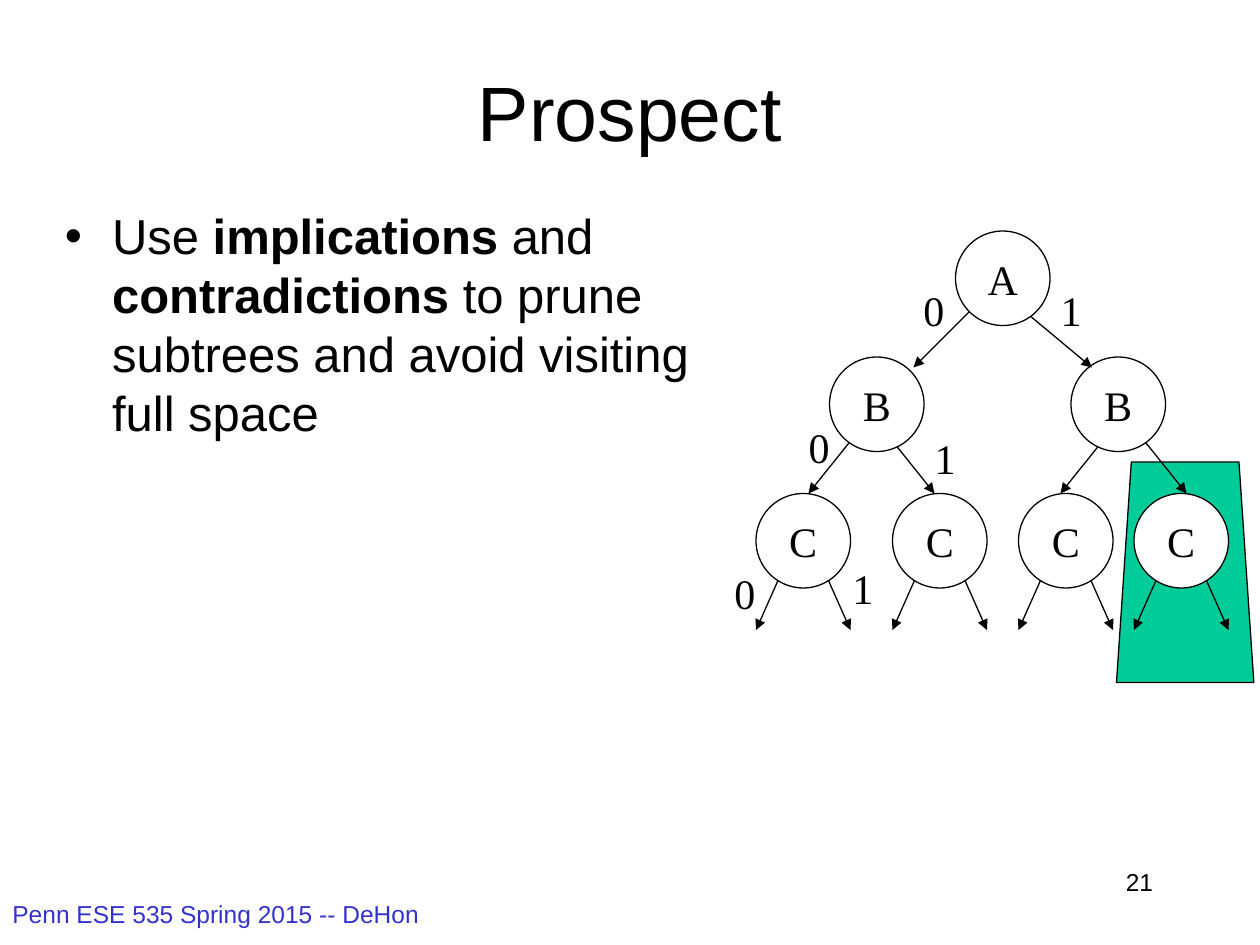
from lxml import etree
from pptx import Presentation
from pptx.dml.color import RGBColor
from pptx.enum import shapes, text
from pptx.oxml import ns
from pptx.util import Pt

COLORS = {"ink": "000000", "paper": "FFFFFF", "footer": "3333CC", "pruned": "00CC99"}
SANS, SERIF = "Arial", "Times New Roman"
NODE = 54


def rgb(name):
    return RGBColor.from_string(COLORS[name])


def add_run(p, words, size, font, color="ink", bold=False):
    r = p.add_run()
    r.text = words
    r.font.size, r.font.name, r.font.bold = Pt(size), font, bold
    r.font.color.rgb = rgb(color)


def add_box(s, x, y, w, h, wrap=True):
    tf = s.shapes.add_textbox(Pt(x), Pt(y), Pt(w), Pt(h)).text_frame
    tf.word_wrap = wrap
    return tf


def style_shape(sp, fill):
    sp.shadow.inherit = False
    sp.fill.solid()
    sp.fill.fore_color.rgb = rgb(fill)
    sp.line.color.rgb = rgb("ink")
    sp.line.width = Pt(0.75)


def add_title(s, x, y, w, h):
    tf = add_box(s, x, y, w, h)
    tf.vertical_anchor = text.MSO_ANCHOR.MIDDLE
    p = tf.paragraphs[0]
    p.alignment = text.PP_ALIGN.CENTER
    add_run(p, "Prospect", 44, SANS)


def add_body(s, x, y, w, h):
    p = add_box(s, x, y, w, h).paragraphs[0]
    p.space_before = Pt(5.6)
    pPr = p._p.get_or_add_pPr()
    pPr.set("marL", str(Pt(27)))
    pPr.set("indent", str(Pt(-27)))
    etree.SubElement(pPr, ns.qn("a:buFont")).set("typeface", SANS)
    etree.SubElement(pPr, ns.qn("a:buChar")).set("char", "•")
    for words, bold in [
        ("Use ", False),
        ("implications", True),
        (" and ", False),
        ("contradictions", True),
        (" to prune subtrees and avoid visiting full space", False),
    ]:
        add_run(p, words, 28, SANS, bold=bold)


def add_footer(s, x, y, w, h):
    p = add_box(s, x, y, w, h).paragraphs[0]
    add_run(p, "Penn ESE 535 Spring 2015 -- DeHon", 14, SANS, "footer")


def add_page_number(s, x, y, w, h):
    p = add_box(s, x, y, w, h).paragraphs[0]
    p.alignment = text.PP_ALIGN.RIGHT
    add_run(p, "21", 14, SANS)


def add_pruned_region(s, x, y, w, h):
    inset = 8.5
    fb = s.shapes.build_freeform(Pt(x), Pt(y + h))
    corners = [(x + inset, y), (x + w - inset, y), (x + w, y + h)]
    fb.add_line_segments([(Pt(cx), Pt(cy)) for cx, cy in corners], close=True)
    style_shape(fb.convert_to_shape(), "pruned")


def add_arrow(s, x1, y1, x2, y2):
    c = s.shapes.add_connector(
        shapes.MSO_CONNECTOR.STRAIGHT, Pt(x1), Pt(y1), Pt(x2), Pt(y2))
    c.line.color.rgb = rgb("ink")
    c.line.width = Pt(0.75)
    etree.SubElement(c.line._get_or_add_ln(), ns.qn("a:tailEnd")).set("type", "triangle")
    etree.SubElement(c._element.spPr, ns.qn("a:effectLst"))


def add_node(s, x, y, name, branches):
    for x1, y1, x2, y2 in branches:
        add_arrow(s, x + x1, y + y1, x + x2, y + y2)
    sp = s.shapes.add_shape(shapes.MSO_SHAPE.OVAL, Pt(x), Pt(y), Pt(NODE), Pt(NODE))
    style_shape(sp, "paper")
    tf = sp.text_frame
    tf.word_wrap = False
    tf.vertical_anchor = text.MSO_ANCHOR.MIDDLE
    p = tf.paragraphs[0]
    p.alignment = text.PP_ALIGN.CENTER
    add_run(p, name, 24, SERIF)


def add_tree(s, x, y):
    leaf = [(24, 24, 0, 78), (30, 24, 54, 78)]
    left_b = [(12, 48, -12, 78), (36, 48, 60, 78)]
    right_b = [(18, 48, -6, 78), (42, 48, 66, 78)]
    root = [(12, 42, -24, 78), (42, 48, 78, 78)]
    nodes = [("C", dx, 150, leaf) for dx in (0, 78, 150, 216)]
    nodes += [("B", 42, 72, left_b), ("B", 180, 72, right_b), ("A", 114, 0, root)]
    for name, dx, dy, branches in nodes:
        add_node(s, x + dx, y + dy, name, branches)
    for digit, dx, dy in [
        ("0", 88.5, 27), ("1", 167, 27),
        ("0", 23, 105.5), ("1", 95, 111.5),
        ("0", -19.5, 189), ("1", 48, 186),
    ]:
        tf = add_box(s, x + dx, y + dy, 26.5, 36, wrap=False)
        add_run(tf.paragraphs[0], digit, 24, SERIF)


def main():
    prs = Presentation()
    prs.slide_width, prs.slide_height = Pt(720), Pt(540)
    s = prs.slides.add_slide(prs.slide_layouts[6])
    add_footer(s, 0, 510, 276, 30)
    add_page_number(s, 516, 492, 150, 36)
    add_title(s, 54, 18, 612, 90)
    add_body(s, 30, 114, 396, 390)
    add_pruned_region(s, 638, 264, 78.5, 126)
    add_tree(s, 432, 132)
    prs.save("out.pptx")


if __name__ == "__main__":
    main()
